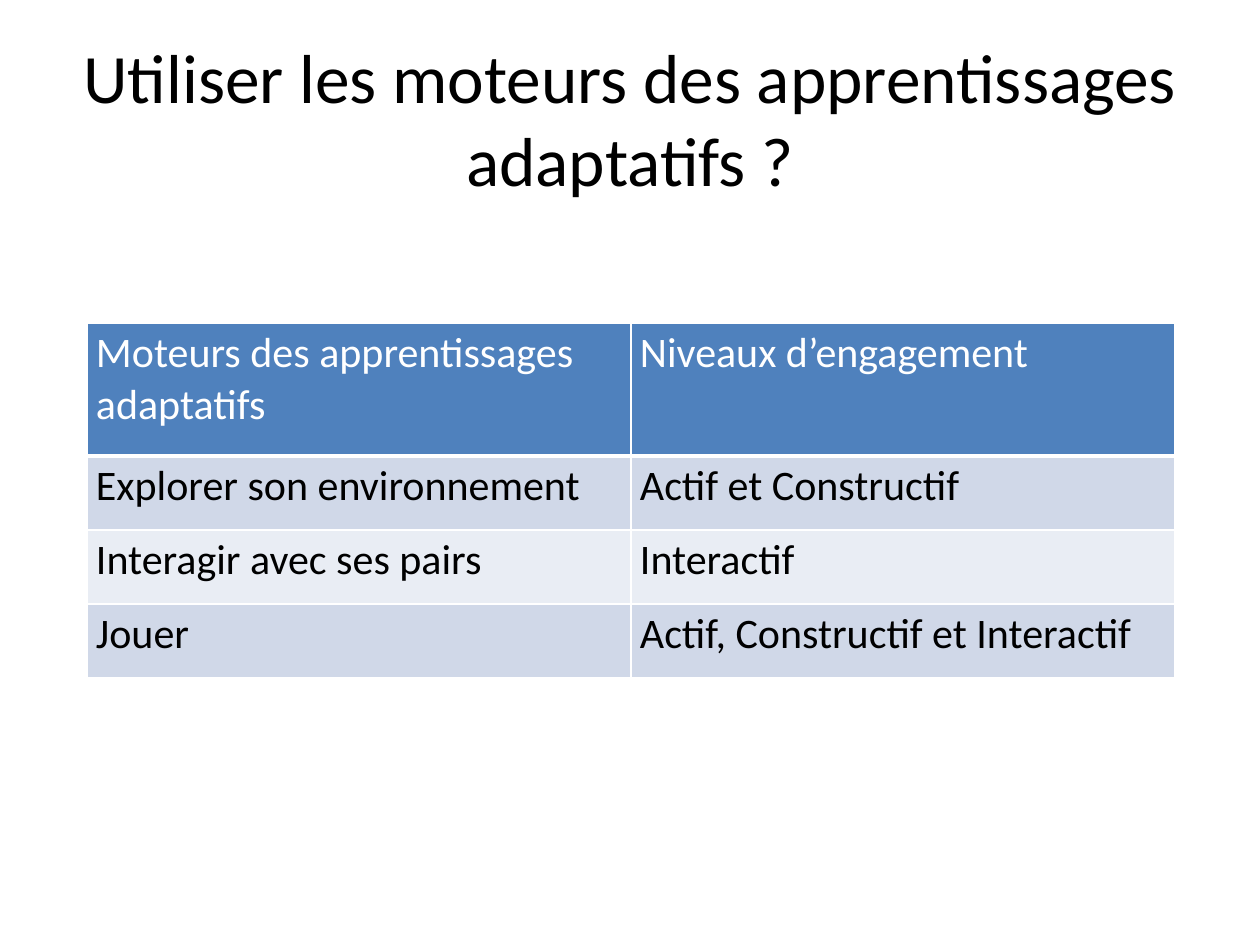
from dataclasses import dataclass

from lxml.etree import SubElement
from pptx import Presentation
from pptx.dml.color import RGBColor
from pptx.enum.text import MSO_ANCHOR, PP_ALIGN
from pptx.oxml.ns import qn
from pptx.util import Pt

PX = 914400 // 126  # EMU per px


@dataclass(frozen=True)
class Theme:
    font: str = "Calibri"
    title_size: float = 39.6
    cell_size: float = 24
    text: str = "000000"
    header_text: str = "FFFFFF"
    header_fill: str = "4F81BD"
    bands: tuple = ("D0D8E8", "E9EDF4")
    border: str = "FFFFFF"


theme = Theme()


def add_run(p, text, size, color):
    r = p.add_run()
    r.text = text
    r.font.name = theme.font
    r.font.size = Pt(size)
    r.font.color.rgb = RGBColor.from_string(color)


def set_borders(cell, bottom):
    """Draw 1 pt borders, with the bottom one as wide as given in points."""
    tcPr = cell._tc.get_or_add_tcPr()
    for side, width in (("L", 1), ("R", 1), ("T", 1), ("B", bottom)):
        ln = SubElement(tcPr, qn(f"a:ln{side}"), w=str(Pt(width)))
        fill = SubElement(ln, qn("a:solidFill"))
        SubElement(fill, qn("a:srgbClr"), val=theme.border)


prs = Presentation()
prs.slide_width, prs.slide_height = 1260 * PX, 945 * PX
s = prs.slides.add_slide(prs.slide_layouts[6])

# Title
title = s.shapes.add_textbox(63 * PX, 38 * PX, 1134 * PX, 158 * PX)
tf = title.text_frame
tf.word_wrap = True
tf.vertical_anchor = MSO_ANCHOR.MIDDLE
p = tf.paragraphs[0]
p.alignment = PP_ALIGN.CENTER
add_run(p, "Utiliser les moteurs des apprentissages adaptatifs ?",
        theme.title_size, theme.text)

# Table of learning drivers and engagement levels
rows = [
    ("Moteurs des apprentissages adaptatifs", "Niveaux d’engagement"),
    ("Explorer son environnement", "Actif et Constructif"),
    ("Interagir avec ses pairs", "Interactif"),
    ("Jouer", "Actif, Constructif et Interactif"),
]
header_height, row_height, col_width = 133, 74, 544
table = s.shapes.add_table(
    len(rows), 2, 87 * PX, 323 * PX, 2 * col_width * PX,
    (header_height + 3 * row_height) * PX).table
for col in table.columns:
    col.width = col_width * PX

for i, texts in enumerate(rows):
    header = i == 0
    table.rows[i].height = (header_height if header else row_height) * PX
    fill = theme.header_fill if header else theme.bands[(i - 1) % 2]
    for j, text in enumerate(texts):
        cell = table.cell(i, j)
        cell.margin_left = cell.margin_right = 9 * PX
        cell.margin_top = cell.margin_bottom = 5 * PX
        set_borders(cell, bottom=3 if header else 1)
        cell.fill.solid()
        cell.fill.fore_color.rgb = RGBColor.from_string(fill)
        p = cell.text_frame.paragraphs[0]
        add_run(p, text, theme.cell_size,
                theme.header_text if header else theme.text)
        p.runs[0].font.bold = False

prs.save("out.pptx")
